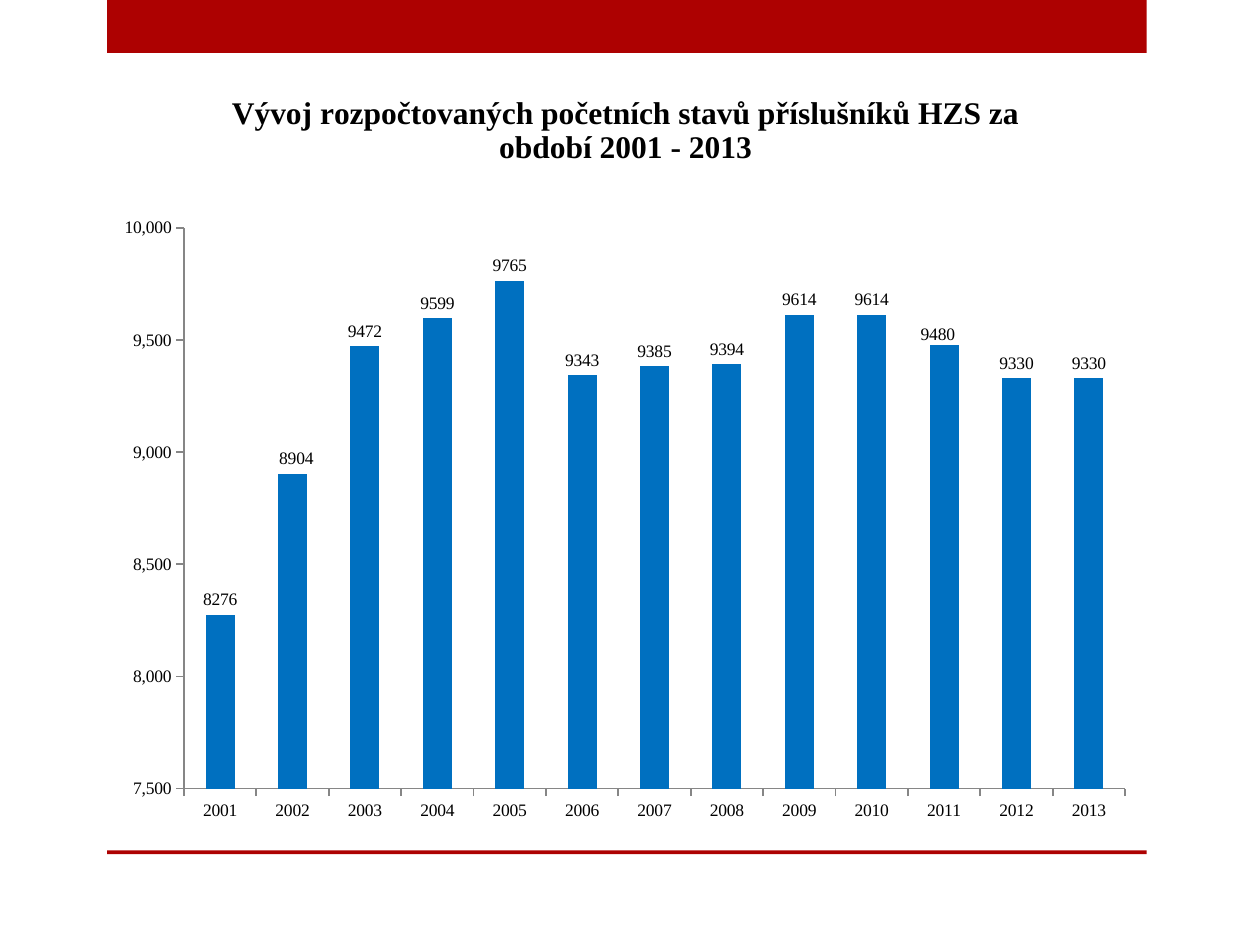
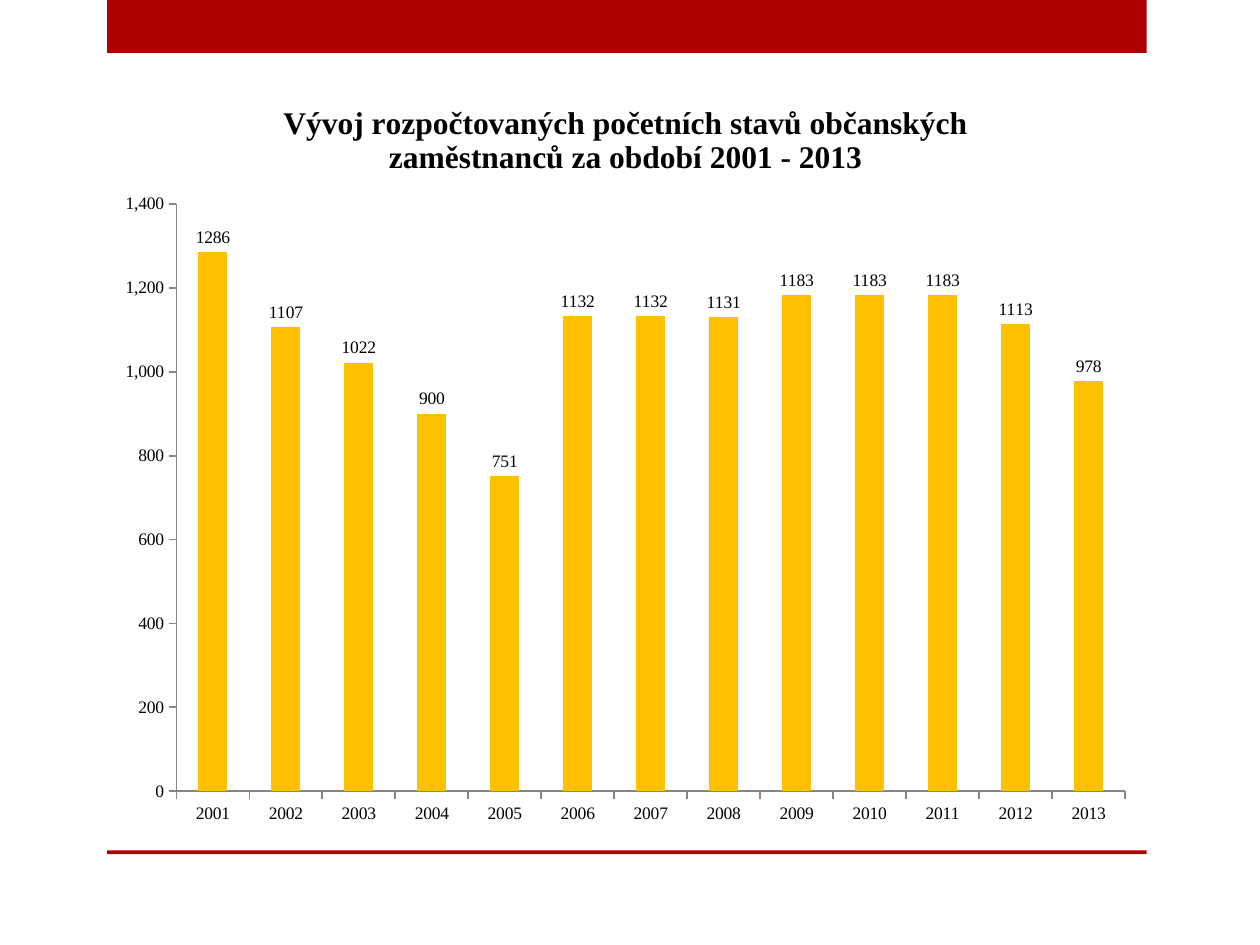
from dataclasses import dataclass

from lxml.etree import SubElement
from pptx import Presentation
from pptx.chart.data import CategoryChartData
from pptx.dml.color import RGBColor
from pptx.enum.chart import XL_CHART_TYPE, XL_LABEL_POSITION, XL_TICK_MARK
from pptx.enum.shapes import MSO_SHAPE
from pptx.oxml import parse_xml
from pptx.oxml.ns import nsdecls, qn
from pptx.util import Inches, Pt


@dataclass(frozen=True)
class Theme:
    font: str = "Times New Roman"
    title_size: Pt = Pt(18)
    label_size: Pt = Pt(10)
    axis_width: Pt = Pt(1)
    text: RGBColor = RGBColor(0x00, 0x00, 0x00)
    band: RGBColor = RGBColor(0xAD, 0x01, 0x01)
    axis: RGBColor = RGBColor(0x86, 0x86, 0x86)
    officers: RGBColor = RGBColor(0x00, 0x70, 0xC0)
    civilians: RGBColor = RGBColor(0xFF, 0xC0, 0x00)


@dataclass(frozen=True)
class Box:
    left: float
    top: float
    width: float
    height: float

    def lengths(self):
        return [Inches(side) for side in (self.left, self.top, self.width, self.height)]

    def share_of(self, outer):
        return {
            "x": (self.left - outer.left) / outer.width,
            "y": (self.top - outer.top) / outer.height,
            "w": self.width / outer.width,
            "h": self.height / outer.height,
        }


@dataclass(frozen=True)
class Staffing:
    title: str
    headcounts: tuple
    color: RGBColor
    chart_box: Box
    plot_box: Box
    scale: tuple
    label_shifts: dict


THEME = Theme()
BANDS = (Box(0.85, 0, 8.25, 0.42), Box(0.85, 6.75, 8.25, 0.03))
YEARS = [str(year) for year in range(2001, 2014)]

STAFFINGS = (
    Staffing(
        title="Vývoj rozpočtovaných početních stavů příslušníků HZS za období 2001 - 2013",
        headcounts=(8276, 8904, 9472, 9599, 9765, 9343, 9385,
                    9394, 9614, 9614, 9480, 9330, 9330),
        color=THEME.officers,
        chart_box=Box(0.83, 0.52, 8.27, 6.12),
        plot_box=Box(1.46, 1.81, 7.47, 4.45),
        scale=(7500, 10000, 500),
        label_shifts={"2002": (0.03, 0), "2011": (-0.05, 0.04)},
    ),
    Staffing(
        title="Vývoj rozpočtovaných početních stavů občanských zaměstnanců za období 2001 - 2013",
        headcounts=(1286, 1107, 1022, 900, 751, 1132, 1132,
                    1131, 1183, 1183, 1183, 1113, 978),
        color=THEME.civilians,
        chart_box=Box(0.83, 0.6, 8.27, 6.05),
        plot_box=Box(1.4, 1.62, 7.53, 4.66),
        scale=(0, 1400, 200),
        label_shifts={},
    ),
)


def style_font(font, size, bold=False):
    font.name = THEME.font
    font.size = size
    font.bold = bold
    font.color.rgb = THEME.text


def add_bands_to_layout(page):
    for box in BANDS:
        band = page.shapes.add_shape(MSO_SHAPE.RECTANGLE, *box.lengths())
        band.shadow.inherit = False
        band.fill.solid()
        band.fill.fore_color.rgb = THEME.band
        band.line.fill.background()
        page.slide_layout.shapes.element.append(band.element)


def manual_layout(settings):
    layout = parse_xml(f"<c:layout {nsdecls('c')}><c:manualLayout/></c:layout>")
    for name, value in settings.items():
        SubElement(layout[0], qn(f"c:{name}")).set("val", str(value))
    return layout


def place_plot(chart, staffing):
    modes = {"layoutTarget": "inner", "xMode": "edge", "yMode": "edge"}
    plot_area = chart.element.find(f".//{qn('c:plotArea')}")
    for layout in plot_area.findall(qn("c:layout")):
        plot_area.remove(layout)
    share = staffing.plot_box.share_of(staffing.chart_box)
    plot_area.insert(0, manual_layout({**modes, **share}))


def set_title(chart, text):
    chart.has_title = True
    chart.chart_title.include_in_layout = False
    span = chart.chart_title.text_frame.paragraphs[0].add_run()
    span.text = text
    style_font(span.font, THEME.title_size, bold=True)


def style_axes(chart, scale):
    for axis in (chart.category_axis, chart.value_axis):
        axis.has_major_gridlines = False
        axis.major_tick_mark = XL_TICK_MARK.OUTSIDE
        axis.minor_tick_mark = XL_TICK_MARK.NONE
        axis.format.line.color.rgb = THEME.axis
        axis.format.line.width = THEME.axis_width
        style_font(axis.tick_labels.font, THEME.label_size)
    value_axis = chart.value_axis
    value_axis.minimum_scale, value_axis.maximum_scale, value_axis.major_unit = scale
    value_axis.tick_labels.number_format = "#,##0"
    value_axis.tick_labels.number_format_is_linked = False


def style_columns(chart, staffing):
    plot = chart.plots[0]
    plot.gap_width = 150
    plot.vary_by_categories = False
    series = plot.series[0]
    series.format.fill.solid()
    series.format.fill.fore_color.rgb = staffing.color
    labels = series.data_labels
    labels.show_value = True
    labels.number_format = "0"
    labels.number_format_is_linked = False
    labels.position = XL_LABEL_POSITION.OUTSIDE_END
    style_font(labels.font, THEME.label_size)
    for year, (right, down) in staffing.label_shifts.items():
        shift_label(series, YEARS.index(year), right, down, staffing.chart_box)


def shift_label(series, position, right, down, chart_box):
    label = series.points[position].data_label
    label.position = XL_LABEL_POSITION.OUTSIDE_END
    style_font(label.font, THEME.label_size)
    shift = {"x": right / chart_box.width, "y": down / chart_box.height}
    for index in series.data_labels._element.iter(qn("c:idx")):
        if index.get("val") == str(position):
            index.addnext(manual_layout(shift))


def add_staffing_chart(page, staffing):
    data = CategoryChartData()
    data.categories = YEARS
    data.add_series("Series 1", staffing.headcounts)
    chart = page.shapes.add_chart(
        XL_CHART_TYPE.COLUMN_CLUSTERED, *staffing.chart_box.lengths(), data
    ).chart
    style_font(chart.font, THEME.label_size)
    chart.has_legend = False
    set_title(chart, staffing.title)
    style_axes(chart, staffing.scale)
    style_columns(chart, staffing)
    place_plot(chart, staffing)


def main():
    deck = Presentation()
    deck.slide_width, deck.slide_height = Inches(10), Inches(7.5)
    blank = deck.slide_layouts.get_by_name("Blank")
    pages = [deck.slides.add_slide(blank) for _ in STAFFINGS]
    add_bands_to_layout(pages[0])
    for page, staffing in zip(pages, STAFFINGS):
        add_staffing_chart(page, staffing)
    deck.save("out.pptx")


if __name__ == "__main__":
    main()
